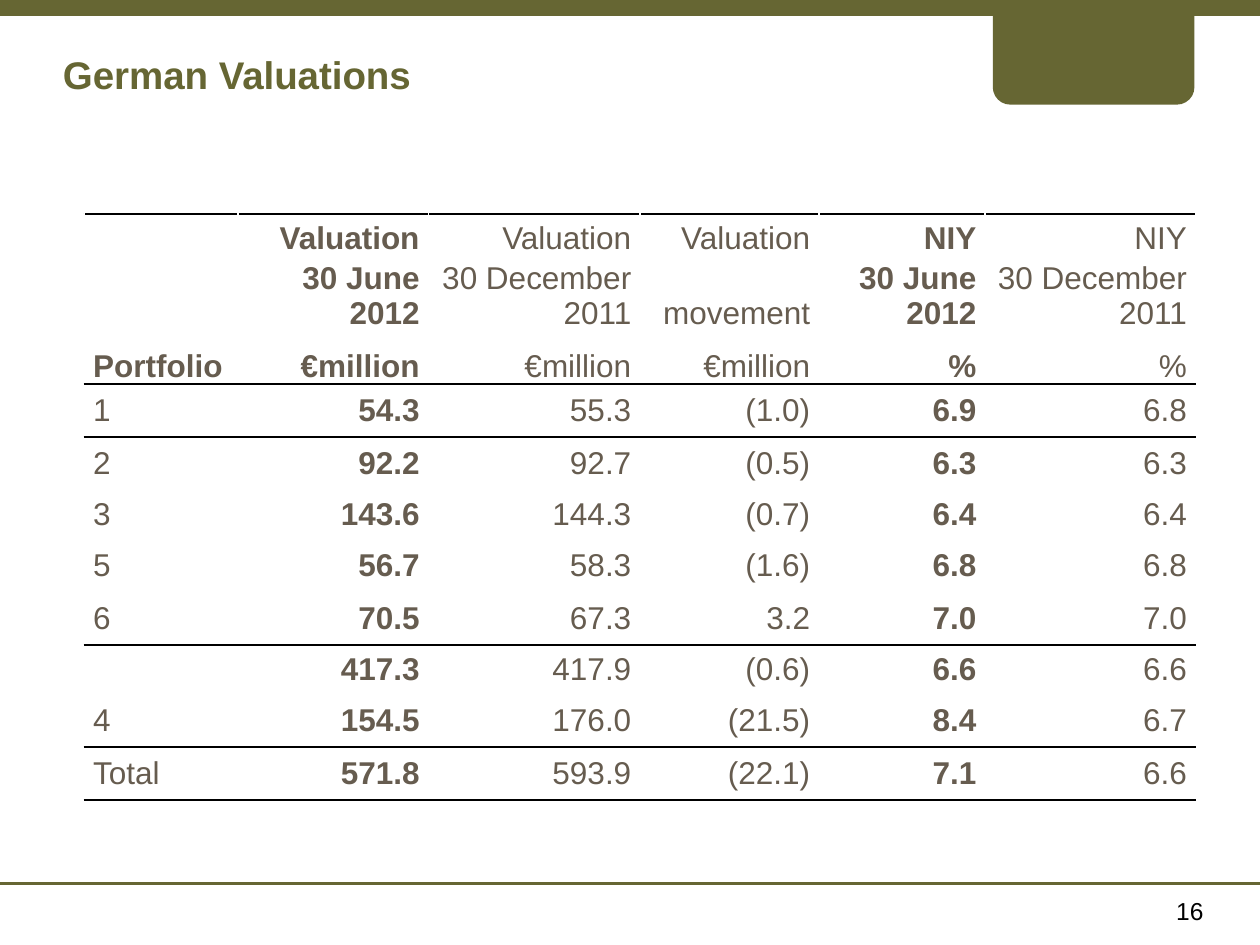
from lxml.etree import SubElement
from pptx import Presentation
from pptx.dml.color import RGBColor
from pptx.enum.shapes import MSO_CONNECTOR, MSO_SHAPE
from pptx.enum.text import MSO_ANCHOR, PP_ALIGN
from pptx.oxml import parse_xml
from pptx.oxml.ns import nsdecls, qn
from pptx.util import Inches, Pt

OLIVE, BROWN, BLACK = "666633", "665C4F", "000000"
WIDTH, HEIGHT = Inches(10), Inches(7.5)

COLUMNS = [12.2, 15.1, 16.8, 14.2, 13.2, 16.7]
ROWS = [4.4, 8, 5.6, 5.6, 5.6, 5.2, 5.6, 5.6, 5.2, 5.6, 5.6]
BOLD_COLUMNS = (1, 4)
HEADER_ROWS = 3
RULES = {0: 1.5, 3: 1.5, 8: 1, 10: 1, 11: 1.5}
VALUATIONS = [
    ["", "Valuation", "Valuation", "Valuation", "NIY", "NIY"],
    ["", "30 June 2012", "30 December 2011", "movement", "30 June 2012", "30 December 2011"],
    ["Portfolio", "€million", "€million", "€million", "%", "%"],
    ["1", "54.3", "55.3", "(1.0)", "6.9", "6.8"],
    ["2", "92.2", "92.7", "(0.5)", "6.3", "6.3"],
    ["3", "143.6", "144.3", "(0.7)", "6.4", "6.4"],
    ["5", "56.7", "58.3", "(1.6)", "6.8", "6.8"],
    ["6", "70.5", "67.3", "3.2", "7.0", "7.0"],
    ["", "417.3", "417.9", "(0.6)", "6.6", "6.6"],
    ["4", "154.5", "176.0", "(21.5)", "8.4", "6.7"],
    ["Total", "571.8", "593.9", "(22.1)", "7.1", "6.6"],
]


def rgb(value):
    return RGBColor.from_string(value)


def across(percent):
    return round(WIDTH * percent / 100)


def down(percent):
    return round(HEIGHT * percent / 100)


def box(left, top, width, height):
    return across(left), down(top), across(width), down(height)


def apply(target, formats):
    for name, value in formats.items():
        setattr(target, name, value)


def write(tf, text, color, align=PP_ALIGN.LEFT, **formats):
    p = tf.paragraphs[0]
    p.alignment = align
    if text:
        r = p.add_run()
        r.text = text
        apply(r.font, {"name": "Arial", **formats})
        r.font.color.rgb = rgb(color)
    return p


def add_text(s, area, text, color, frame, **formats):
    tf = s.shapes.add_textbox(*box(*area)).text_frame
    apply(tf, {"word_wrap": True, **frame})
    return write(tf, text, color, **formats)


def add_rule(s, y, weight):
    line = s.shapes.add_connector(MSO_CONNECTOR.STRAIGHT, 0, down(y), WIDTH, down(y))
    line.line.color.rgb = rgb(OLIVE)
    line.line.width = Pt(weight)
    SubElement(line._element.spPr, qn("a:effectLst"))


def add_tab(s, area):
    sp = s.shapes.add_shape(MSO_SHAPE.ROUNDED_RECTANGLE, *box(*area))
    sp.shadow.inherit = False
    sp.fill.solid()
    sp.fill.fore_color.rgb = rgb(OLIVE)
    sp.line.fill.background()


def set_borders(cell, row):
    edges = [("lnT", RULES.get(row)), ("lnB", RULES.get(row + 1))]
    visible = [(tag, weight) for tag, weight in edges if weight]
    for position, (tag, weight) in enumerate(visible):
        border = parse_xml(
            f'<a:{tag} {nsdecls("a")} w="{Pt(weight)}"><a:solidFill>'
            f'<a:srgbClr val="{BLACK}"/></a:solidFill></a:{tag}>'
        )
        cell._tc.get_or_add_tcPr().insert(position, border)


def fill_cell(cell, text, row, column):
    anchor = MSO_ANCHOR.BOTTOM if row < HEADER_ROWS else MSO_ANCHOR.MIDDLE
    apply(cell, {
        "margin_left": Inches(0.07), "margin_right": Inches(0.07),
        "margin_top": 0, "margin_bottom": 0, "vertical_anchor": anchor,
    })
    cell.fill.background()
    bold = column in BOLD_COLUMNS or text == "Portfolio"
    align = PP_ALIGN.RIGHT if column else PP_ALIGN.LEFT
    write(cell.text_frame, text, BROWN, align, size=Pt(18), bold=bold)
    set_borders(cell, row)


def add_valuations(s, left, top):
    area = box(left, top, sum(COLUMNS), sum(ROWS))
    table = s.shapes.add_table(len(ROWS), len(COLUMNS), *area).table
    apply(table, {"first_row": False, "horz_banding": False})
    for column, width in zip(table.columns, COLUMNS):
        column.width = across(width)
    for row, height in zip(table.rows, ROWS):
        row.height = down(height)
    for i, values in enumerate(VALUATIONS):
        for j, text in enumerate(values):
            fill_cell(table.cell(i, j), text, i, j)


def main():
    prs = Presentation()
    apply(prs, {"slide_width": WIDTH, "slide_height": HEIGHT})
    s = prs.slides.add_slide(prs.slide_layouts[6])
    add_rule(s, 93.47, 2)
    add_tab(s, (78.8, 0, 16, 11.07))
    add_rule(s, 0.8, 10)
    add_text(s, (83, 94.13, 13.5, 4.8), "16", BLACK, {},
             align=PP_ALIGN.RIGHT, size=Pt(14))
    frame = {"margin_left": 0, "margin_top": 0, "margin_bottom": 0,
             "margin_right": Inches(0.04), "vertical_anchor": MSO_ANCHOR.MIDDLE}
    p = add_text(s, (5, 4, 72.6, 7.73), "German Valuations", OLIVE, frame,
                 size=Pt(22), bold=True)
    hang = Inches(0.04)
    for name, value in {"marL": hang, "indent": -hang}.items():
        p._p.get_or_add_pPr().set(name, str(value))
    add_valuations(s, 6.7, 22.67)
    prs.save("out.pptx")


if __name__ == "__main__":
    main()
